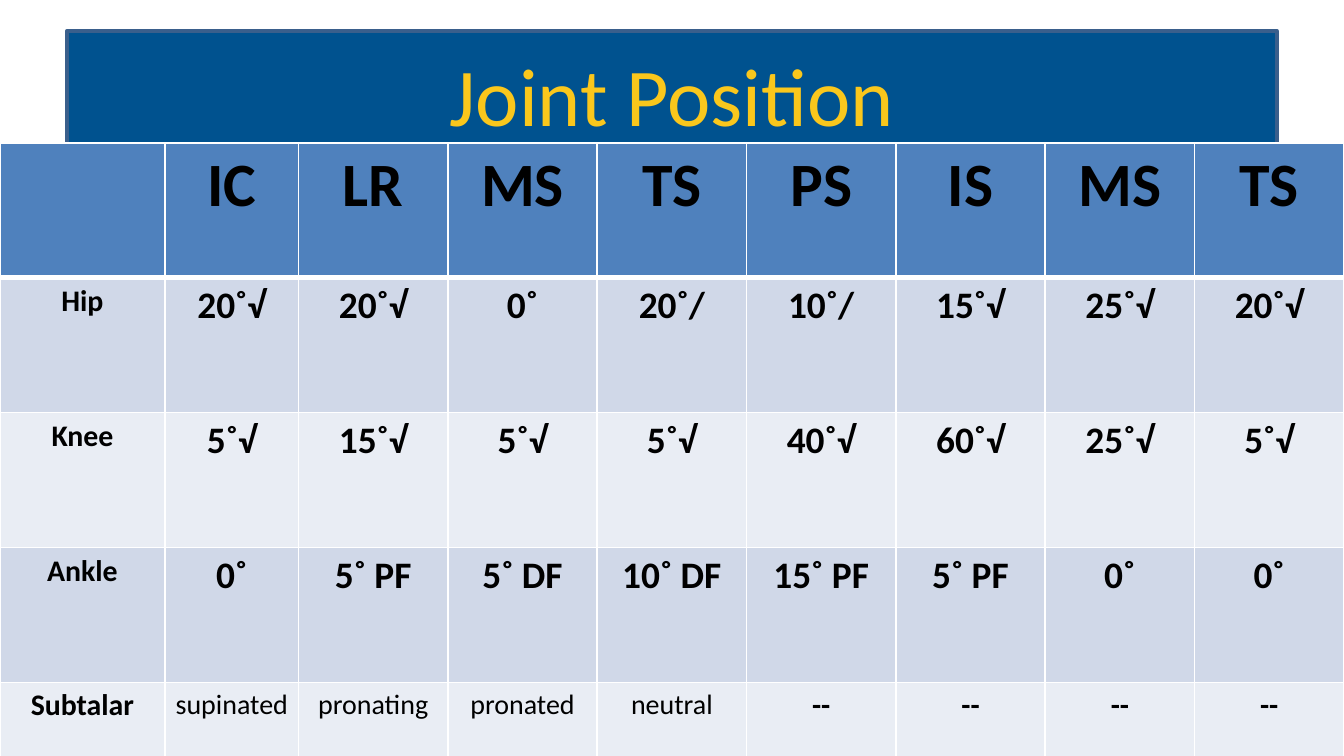
import pptx
import pptx.util
import pptx.dml.color
import pptx.enum.shapes
import pptx.enum.text
import pptx.oxml
import pptx.oxml.ns

Pt = pptx.util.Pt

# Content
TITLE = "Joint Position"
HEADER = ["", "IC", "LR", "MS", "TS", "PS", "IS", "MS", "TS"]
JOINTS = [
    ["Hip", "20˚√", "20˚√", "0˚", "20˚/", "10˚/", "15˚√", "25˚√", "20˚√"],
    ["Knee", "5˚√", "15˚√", "5˚√", "5˚√", "40˚√", "60˚√", "25˚√", "5˚√"],
    ["Ankle", "0˚", "5˚ PF", "5˚ DF", "10˚ DF", "15˚ PF", "5˚ PF", "0˚", "0˚"],
    ["Subtalar", "supinated", "pronating", "pronated", "neutral", "--", "--", "--", "--"],
]
ROWS = [HEADER] + JOINTS

COLORS = {
    "band": "00528F", "band line": "3A5F8C", "title": "FAC71C",
    "header": "4F81BD", "odd row": "D0D8E8", "even row": "E9EDF4",
    "text": "000000", "border": "FFFFFF",
}
FONT = "Calibri"
COLUMN_WIDTHS = [88.4, 71.6] + [80] * 7
ROW_HEIGHT = 72.3


def rgb(name):
    return pptx.dml.color.RGBColor.from_string(COLORS[name])


def format_text(text_frame, size, color, bold):
    paragraph = text_frame.paragraphs[0]
    paragraph.alignment = pptx.enum.text.PP_ALIGN.CENTER
    for run in paragraph.runs:
        run.font.name = FONT
        run.font.size = Pt(size)
        run.font.bold = bold
        run.font.color.rgb = rgb(color)


def add_borders(cell, widths):
    properties = cell._tc.get_or_add_tcPr()
    for side, width in widths.items():
        properties.append(pptx.oxml.parse_xml(
            f'<a:ln{side} {pptx.oxml.ns.nsdecls("a")} w="{Pt(width)}"><a:solidFill>'
            f'<a:srgbClr val="{COLORS["border"]}"/></a:solidFill></a:ln{side}>'))


def text_style(row, column, text):
    """Return the size and weight of a table text."""
    if row == 0:
        return 33, True
    if column == 0 or text == "--":
        return 16, True
    if row == len(JOINTS):
        return 15, False
    return 20, True


presentation = pptx.Presentation()
presentation.slide_width = Pt(720)
presentation.slide_height = Pt(405)
slide = presentation.slides.add_slide(presentation.slide_layouts[5])

# Title on its band
title = slide.shapes.title
title.left, title.top, title.width, title.height = Pt(36), Pt(16.5), Pt(648), Pt(67.5)
title.text_frame.text = TITLE
title.text_frame.vertical_anchor = pptx.enum.text.MSO_ANCHOR.MIDDLE
format_text(title.text_frame, 44, "title", False)

band = slide.shapes.add_shape(
    pptx.enum.shapes.MSO_SHAPE.RECTANGLE, Pt(36), Pt(16.5), Pt(648), Pt(66))
band.shadow.inherit = False
band.fill.solid()
band.fill.fore_color.rgb = rgb("band")
band.line.color.rgb = rgb("band line")
band.line.width = Pt(2)
title.element.addprevious(band.element)  # band lies behind the title

# Table of joint angles by gait phase
table = slide.shapes.add_table(
    len(ROWS), len(HEADER), Pt(0), Pt(76.5),
    Pt(sum(COLUMN_WIDTHS)), Pt(ROW_HEIGHT * len(ROWS))).table
for column, width in zip(table.columns, COLUMN_WIDTHS):
    column.width = Pt(width)

for row_index, texts in enumerate(ROWS):
    table.rows[row_index].height = Pt(ROW_HEIGHT)
    fill = "header" if row_index == 0 else "odd row" if row_index % 2 else "even row"
    top = 3 if row_index == 1 else 1
    bottom = 3 if row_index == 0 else 1
    for column_index, text in enumerate(texts):
        cell = table.cell(row_index, column_index)
        cell.margin_left = cell.margin_right = Pt(5.4)
        cell.margin_top = cell.margin_bottom = Pt(2.7)
        add_borders(cell, {"L": 1, "R": 1, "T": top, "B": bottom})
        cell.fill.solid()
        cell.fill.fore_color.rgb = rgb(fill)
        cell.text_frame.text = text
        size, bold = text_style(row_index, column_index, text)
        format_text(cell.text_frame, size, "text", bold)

presentation.save("out.pptx")
